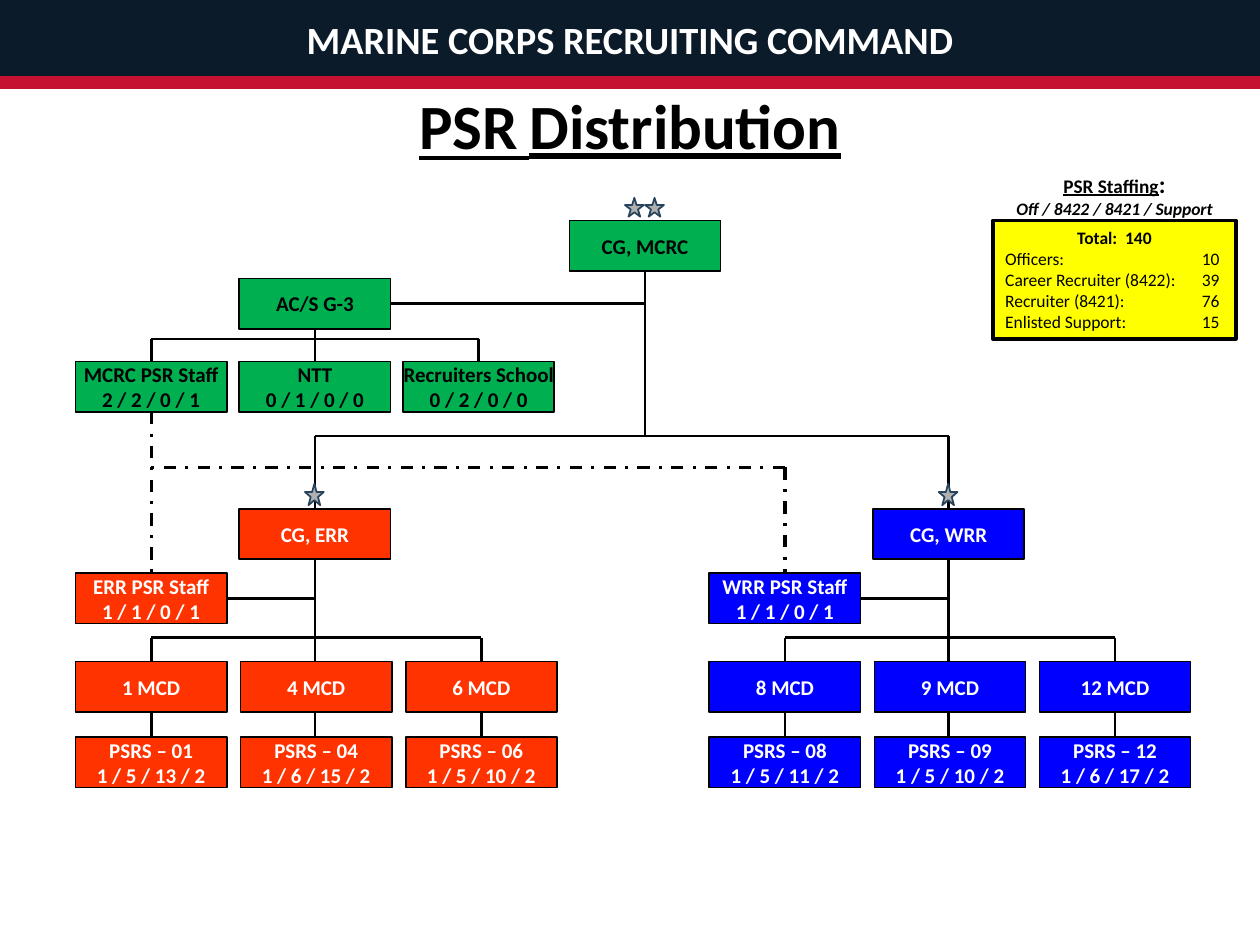
from lxml.etree import SubElement
from pptx import Presentation
from pptx.dml.color import RGBColor
from pptx.enum.dml import MSO_LINE
from pptx.enum.shapes import MSO_CONNECTOR, MSO_SHAPE
from pptx.enum.text import MSO_ANCHOR, PP_ALIGN
from pptx.oxml.ns import qn
from pptx.util import Inches, Pt

BLACK = RGBColor(0x00, 0x00, 0x00)
WHITE = RGBColor(0xFF, 0xFF, 0xFF)
NAVY = RGBColor(0x0B, 0x1B, 0x2A)
CRIMSON = RGBColor(0xC4, 0x12, 0x30)
GREEN = RGBColor(0x00, 0xB0, 0x50)
ORANGE = RGBColor(0xFF, 0x33, 0x00)
BLUE = RGBColor(0x00, 0x00, 0xFF)
YELLOW = RGBColor(0xFF, 0xFF, 0x00)
SILVER = RGBColor(0xB0, 0xB0, 0xB0)
STEEL = RGBColor(0x28, 0x44, 0x5D)

# Grid: box size, column pitch, and the tops of the rows
W, H = 1.2, 0.4
LEFT, STEP, HQ_STEP = 0.6, 1.31, 1.3
EAST, WEST = 0, 5.03
TOP, G3, STAFF, CG, PSR, MCD, PSRS = 1.75, 2.21, 2.87, 4.04, 4.55, 5.25, 5.85
HQ_BUS, CG_BUS, DASH_BUS, MCD_BUS = 2.69, 3.46, 3.71, 5.06
TRUNK, HQ_TRUNK = 2.5, 5.12
FIRST, LAST = LEFT + W / 2, LEFT + W / 2 + 2 * STEP


def write(p, text, size=12, color=BLACK, bold=True, italic=False,
          underline=False, align=PP_ALIGN.CENTER):
    p.alignment = align
    r = p.add_run()
    r.text = text
    f = r.font
    f.name, f.size, f.bold, f.italic = "Calibri", Pt(size), bold, italic
    f.underline = underline
    f.color.rgb = color
    return r


def add_shape(kind, x, y, w, h, fill, line=BLACK, width=1):
    sp = s.shapes.add_shape(kind, Inches(x), Inches(y), Inches(w), Inches(h))
    sp.shadow.inherit = False
    sp.fill.solid()
    sp.fill.fore_color.rgb = fill
    sp.line.color.rgb = line
    sp.line.width = Pt(width)
    return sp


prs = Presentation()
prs.slide_width, prs.slide_height = Inches(10), Inches(7.5)
s = prs.slides.add_slide(prs.slide_layouts[5])

# Banner
add_shape(MSO_SHAPE.RECTANGLE, 0, 0.6, 10, 0.1, CRIMSON, CRIMSON)
add_shape(MSO_SHAPE.RECTANGLE, 0, 0, 10, 0.6, NAVY, NAVY)
banner = s.shapes.add_textbox(0, Inches(0.08), prs.slide_width, Inches(0.47))
banner.text_frame.word_wrap = True
write(banner.text_frame.paragraphs[0], "MARINE CORPS RECRUITING COMMAND",
      size=22, color=WHITE)

# Title
title = s.shapes.title
title.left, title.top = 0, Inches(0.63)
title.width, title.height = prs.slide_width, Inches(0.71)
title.text_frame.vertical_anchor = MSO_ANCHOR.MIDDLE
p = title.text_frame.paragraphs[0]
r = write(p, "PSR ", size=36, underline=True)
r.font._element.set("cap", "small")
write(p, "Distribution", size=36, underline=True)

# Connecting lines: x1, y1, x2, y2, dashed
lines = [
    (HQ_TRUNK, TOP + H, HQ_TRUNK, CG_BUS, False),
    (LEFT + HQ_STEP + W, 2.41, HQ_TRUNK, 2.41, False),
    (TRUNK, G3, TRUNK, STAFF, False),
    (FIRST, HQ_BUS, 3.8, HQ_BUS, False),
    (FIRST, HQ_BUS, FIRST, STAFF, False),
    (3.8, HQ_BUS, 3.8, STAFF, False),
    (TRUNK, CG_BUS, TRUNK + WEST, CG_BUS, False),
    (FIRST, STAFF + H, FIRST, PSR, True),
    (FIRST + WEST, DASH_BUS, FIRST, DASH_BUS, True),
    (FIRST + WEST, DASH_BUS, FIRST + WEST, PSR, True),
]
for dx in (EAST, WEST):
    lines += [
        (TRUNK + dx, CG_BUS, TRUNK + dx, PSRS, False),
        (LEFT + W + dx, PSR + H / 2, TRUNK + dx, PSR + H / 2, False),
        (FIRST + dx, MCD_BUS, LAST + dx, MCD_BUS, False),
        (FIRST + dx, MCD_BUS, FIRST + dx, PSRS, False),
        (LAST + dx, MCD_BUS, LAST + dx, PSRS, False),
    ]
for x1, y1, x2, y2, dashed in lines:
    c = s.shapes.add_connector(MSO_CONNECTOR.STRAIGHT, Inches(x1), Inches(y1),
                               Inches(x2), Inches(y2))
    c.line.color.rgb = BLACK
    c.line.width = Pt(1.75 if dashed else 1.5)
    if dashed:
        c.line.dash_style = MSO_LINE.DASH_DOT
    SubElement(c._element.spPr, qn("a:effectLst"))

# Organisation boxes: left, top, fill, text colour, lines of text
boxes = [
    (HQ_TRUNK - W / 2, TOP, GREEN, BLACK, ["CG, MCRC"]),
    (LEFT + HQ_STEP, G3, GREEN, BLACK, ["AC/S G-3"]),
]
staff = [("MCRC PSR Staff", "2 / 2 / 0 / 1"), ("NTT", "0 / 1 / 0 / 0"),
         ("Recruiters School", "0 / 2 / 0 / 0")]
for i, texts in enumerate(staff):
    boxes.append((LEFT + i * HQ_STEP, STAFF, GREEN, BLACK, texts))

regions = [
    ("ERR", EAST, ORANGE, [(1, "1 / 5 / 13 / 2"), (4, "1 / 6 / 15 / 2"),
                           (6, "1 / 5 / 10 / 2")]),
    ("WRR", WEST, BLUE, [(8, "1 / 5 / 11 / 2"), (9, "1 / 5 / 10 / 2"),
                         (12, "1 / 6 / 17 / 2")]),
]
for region, dx, fill, districts in regions:
    boxes.append((TRUNK - W / 2 + dx, CG, fill, WHITE, [f"CG, {region}"]))
    boxes.append((LEFT + dx, PSR, fill, WHITE,
                  [f"{region} PSR Staff", "1 / 1 / 0 / 1"]))
    for i, (number, counts) in enumerate(districts):
        x = LEFT + dx + i * STEP
        boxes.append((x, MCD, fill, WHITE, [f"{number} MCD"]))
        boxes.append((x, PSRS, fill, WHITE, [f"PSRS – {number:02d}", counts]))

for x, y, fill, color, texts in boxes:
    tf = add_shape(MSO_SHAPE.RECTANGLE, x, y, W, H, fill).text_frame
    tf.word_wrap = False
    tf.vertical_anchor = MSO_ANCHOR.MIDDLE
    for i, text in enumerate(texts):
        write(tf.add_paragraph() if i else tf.paragraphs[0], text, color=color)

# General officer stars
for x, y, h in [(4.96, 1.57, 0.15), (5.12, 1.57, 0.15),
                (2.42, 3.84, 0.17), (2.42 + WEST, 3.84, 0.17)]:
    add_shape(MSO_SHAPE.STAR_5_POINT, x, y, 0.15, h, SILVER, STEEL)

# Staffing legend
heading = s.shapes.add_textbox(Inches(7.84), Inches(1.29), Inches(2.01), Inches(0.51))
tf = heading.text_frame
tf.word_wrap = True
write(tf.paragraphs[0], "PSR Staffing", size=11, underline=True)
write(tf.paragraphs[0], ":", size=14)
write(tf.add_paragraph(), "Off / 8422 / 8421 / Support", size=10, italic=True)

legend = add_shape(MSO_SHAPE.RECTANGLE, 7.88, TOP, 1.93, 0.94, YELLOW, width=2)
tf = legend.text_frame
tf.word_wrap = True
tf.vertical_anchor = MSO_ANCHOR.TOP
write(tf.paragraphs[0], "Total:  140", size=10)
for label, count in [("Officers:", 10), ("Career Recruiter (8422):", 39),
                     ("Recruiter (8421):", 76), ("Enlisted Support:", 15)]:
    p = tf.add_paragraph()
    tabs = SubElement(p._p.get_or_add_pPr(), qn("a:tabLst"))
    SubElement(tabs, qn("a:tab"), pos=str(Inches(1.7)), algn="r")
    write(p, f"{label}\t{count}", size=10, bold=False, align=PP_ALIGN.LEFT)

prs.save("out.pptx")
